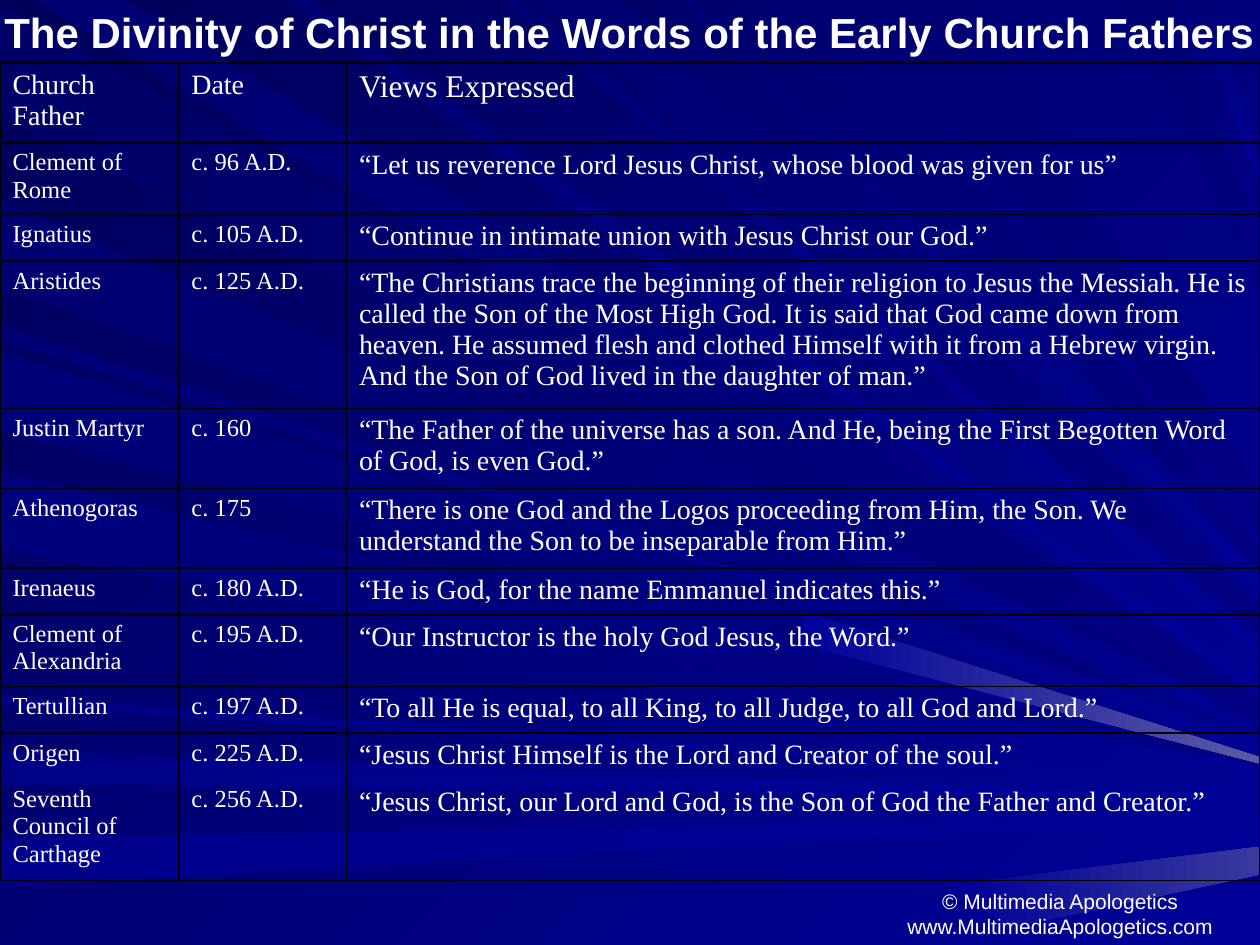
import pptx
import pptx.dml.color
import pptx.enum.text
import pptx.oxml
import pptx.oxml.ns
import pptx.util

Inches = pptx.util.Inches
Align = pptx.enum.text.PP_ALIGN
Anchor = pptx.enum.text.MSO_ANCHOR
rgb = pptx.dml.color.RGBColor.from_string


def paint(fill, first, last, angle):
    """Fill with a gradient whose angle runs clockwise."""
    fill.gradient()
    fill.gradient_angle = (360 - angle) % 360
    for stop, color in zip(fill.gradient_stops, (first, last)):
        stop.color.rgb = rgb(color)


def write(para, text, size, font="Arial", bold=False):
    run = para.add_run()
    run.text = text
    run.font.size = pptx.util.Pt(size)
    run.font.name = font
    run.font.bold = bold
    run.font.color.rgb = rgb("FFFFFF")


deck = pptx.Presentation()
deck.slide_width = Inches(10)
deck.slide_height = Inches(7.5)
slide = deck.slides.add_slide(deck.slide_layouts[5])
shapes = slide.shapes
paint(slide.background.fill, "000058", "000099", 45)

# Rays from the left edge: upper y, lower y, y where they meet the right edge
left_rays = [
    (0.02, 0.93, 5.7), (1.59, 2.28, 5.85), (2.58, 2.7, 5.89), (2.78, 3.42, 6),
    (3.74, 4.37, 6.06), (5.52, 5.6, 6.22), (5.96, 6.23, 6.32), (6.65, 7.04, 6.47),
]
# Rays from the top edge: left x, right x, middle y on the right edge
top_rays = [
    (0.26, 1.01, 5.63), (2.25, 2.47, 5.5), (3.98, 4.16, 5.18), (4.26, 4.92, 4.93),
    (5.4, 5.52, 4.63), (6.06, 6.61, 4.46), (6.86, 7.7, 4.1), (8.87, 9.3, 2.1), (9.39, 9.64, 1.4),
]
rays = []
for start, stop, end in left_rays:
    # Lower rays start brighter, wide rays stay darker
    first = f"0000{105 + round(5 * start):02X}"
    last = "000080" if stop - start > 0.4 else "000099"
    rays.append((first, last, 0, [(0, start), (0, stop), (10, end)]))
for start, stop, end in top_rays:
    half = 0.2 * (stop - start)
    last = "000080" if stop - start > 0.4 else "000099"
    rays.append(("000073", last, 45, [(start, 0), (stop, 0), (10, end - half), (10, end + half)]))
# Bright tips at the lower right
rays.append(("000099", "5A5AA6", 0, [(6.37, 4.85), (6.33, 5.11), (10, 6.06), (10, 6.01)]))
rays.append(("000099", "39399E", 0, [(7.56, 7.02), (8, 7.37), (10, 6.94), (10, 6.72)]))

for first, last, angle, corners in rays:
    points = [(Inches(x), Inches(y)) for x, y in corners]
    pen = shapes.build_freeform(*points[0])
    pen.add_line_segments(points[1:], close=True)
    ray = pen.convert_to_shape()
    ray.shadow.inherit = False
    ray.line.fill.background()
    paint(ray.fill, first, last, angle)

# Credit line
credit = shapes.add_textbox(Inches(6.83), Inches(7), Inches(3.17), Inches(0.5)).text_frame
credit.word_wrap = True
credit.vertical_anchor = Anchor.BOTTOM
for para, text in (
    (credit.paragraphs[0], "© Multimedia Apologetics"),
    (credit.add_paragraph(), "www.MultimediaApologetics.com"),
):
    para.alignment = Align.CENTER
    write(para, text, 12)

# Title, brought in front of the rays
title = shapes.title
title.left, title.top = Inches(-0.25), Inches(0)
title.width, title.height = Inches(10.49), Inches(0.5)
frame = title.text_frame
frame.word_wrap = True
frame.auto_size = pptx.enum.text.MSO_AUTO_SIZE.SHAPE_TO_FIT_TEXT
frame.vertical_anchor = Anchor.MIDDLE
frame.paragraphs[0].alignment = Align.CENTER
write(frame.paragraphs[0], "The Divinity of Christ in the Words of the Early Church Fathers", 24, bold=True)
shapes._spTree.append(title._element)

# Table of quotations: row height, father, date, view
rows = [
    (0.63, "Church Father", "Date", "Views Expressed"),
    (0.57, "Clement of Rome", "c. 96 A.D.", "“Let us reverence Lord Jesus Christ, whose blood was given for us”"),
    (0.37, "Ignatius", "c. 105 A.D.", "“Continue in intimate union with Jesus Christ our God.”"),
    (1.17, "Aristides", "c. 125 A.D.",
     "“The Christians trace the beginning of their religion to Jesus the Messiah. He is called the Son of "
     "the Most High God. It is said that God came down from heaven. He assumed flesh and clothed Himself "
     "with it from a Hebrew virgin. And the Son of God lived in the daughter of man.”"),
    (0.63, "Justin Martyr", "c. 160",
     "“The Father of the universe has a son. And He, being the First Begotten Word of God, is even God.”"),
    (0.63, "Athenogoras", "c. 175",
     "“There is one God and the Logos proceeding from Him, the Son. We understand the Son to be "
     "inseparable from Him.”"),
    (0.37, "Irenaeus", "c. 180 A.D.", "“He is God, for the name Emmanuel indicates this.”"),
    (0.57, "Clement of Alexandria", "c. 195 A.D.", "“Our Instructor is the holy God Jesus, the Word.”"),
    (0.37, "Tertullian", "c. 197 A.D.", "“To all He is equal, to all King, to all Judge, to all God and Lord.”"),
    (0.37, "Origen", "c. 225 A.D.", "“Jesus Christ Himself is the Lord and Creator of the soul.”"),
    (0.8, "Seventh Council of Carthage", "c. 256 A.D.",
     "“Jesus Christ, our Lord and God, is the Son of God the Father and Creator.”"),
]
table = shapes.add_table(len(rows), 3, Inches(0), Inches(0.5), Inches(10), Inches(6.47)).table
table.first_row = False
table.horz_banding = False
for column, width in zip(table.columns, (1.42, 1.33, 7.25)):
    column.width = Inches(width)

space = pptx.oxml.ns.nsdecls("a")
for r, (height, *texts) in enumerate(rows):
    table.rows[r].height = Inches(height)
    sizes = (14, 14, 16) if r else (16, 16, 18)
    for c, (text, size) in enumerate(zip(texts, sizes)):
        cell = table.cell(r, c)
        props = cell._tc.get_or_add_tcPr()
        for side in "LRTB":
            props.append(pptx.oxml.parse_xml(
                f'<a:ln{side} {space} w="12700"><a:solidFill><a:srgbClr val="000000"/>'
                f'</a:solidFill></a:ln{side}>'))
        cell.fill.background()
        write(cell.text_frame.paragraphs[0], text, size, "Times New Roman")

deck.save("out.pptx")
